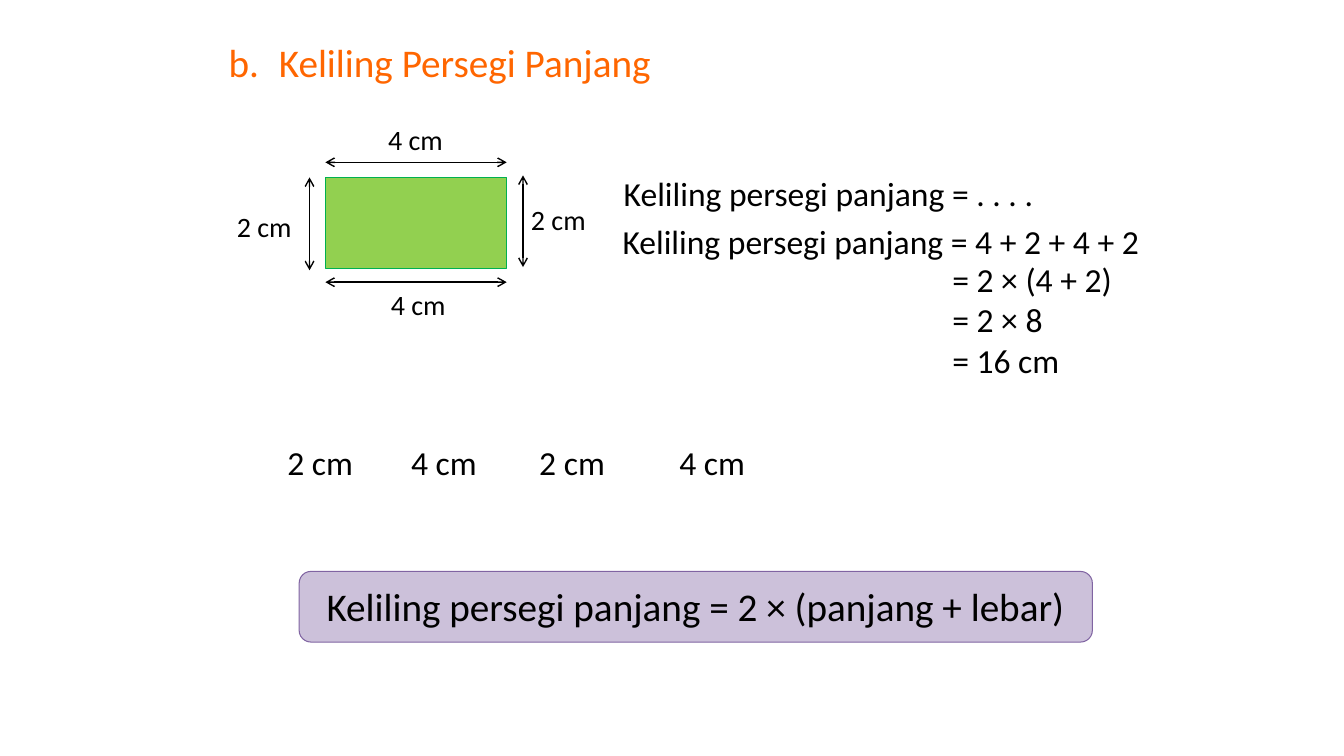
from dataclasses import dataclass

from lxml.etree import SubElement
from pptx import Presentation
from pptx.dml.color import RGBColor
from pptx.enum.shapes import MSO_CONNECTOR, MSO_SHAPE as SHAPE
from pptx.enum.text import MSO_AUTO_SIZE as AUTO_SIZE
from pptx.oxml.ns import qn
from pptx.util import Cm, Pt


@dataclass(frozen=True)
class Theme:
    font: str = "Calibri"
    text: RGBColor = RGBColor(0x00, 0x00, 0x00)
    heading: RGBColor = RGBColor(0xFF, 0x66, 0x00)
    green: RGBColor = RGBColor(0x92, 0xD0, 0x50)
    green_line: RGBColor = RGBColor(0x00, 0xB0, 0x50)
    purple: RGBColor = RGBColor(0xCC, 0xC1, 0xDA)
    purple_line: RGBColor = RGBColor(0x80, 0x64, 0xA2)
    large: Pt = Pt(28)
    body: Pt = Pt(24)
    small: Pt = Pt(20)
    outline: Pt = Pt(0.75)
    arrow: Pt = Pt(1)


theme = Theme()


def add_text(shapes, box, lines, size, color=theme.text, wrap=False, tab=None):
    frame = shapes.add_textbox(*map(Cm, box)).text_frame
    frame.word_wrap = wrap
    frame.auto_size = AUTO_SIZE.SHAPE_TO_FIT_TEXT
    frame.text = "\n".join(lines)
    for paragraph in frame.paragraphs:
        if tab:
            tabs = SubElement(paragraph._p.get_or_add_pPr(), qn("a:tabLst"))
            SubElement(tabs, qn("a:tab"), pos=str(Cm(tab)), algn="l")
        font = paragraph.font
        font.name, font.size, font.color.rgb = theme.font, size, color


def add_panel(shapes, kind, box, fill, line):
    shape = shapes.add_shape(kind, *map(Cm, box))
    shape.shadow.inherit = False
    shape.fill.solid()
    shape.fill.fore_color.rgb = fill
    shape.line.color.rgb = line
    shape.line.width = theme.outline


presentation = Presentation()
presentation.slide_width, presentation.slide_height = Cm(33.87), Cm(19.05)
slide = presentation.slides.add_slide(presentation.slide_layouts[6])
shapes = slide.shapes

# Heading
add_text(shapes, (5.51, 0.84, 11.25, 1.45), ["b.\tKeliling Persegi Panjang"],
         theme.large, theme.heading, tab=1.27)

# Rectangle with its side lengths
left, top, width, height = 8.2, 4.47, 4.57, 2.29
add_panel(shapes, SHAPE.RECTANGLE, (left, top, width, height),
          theme.green, theme.green_line)
for label, x, y in [("2 cm", 5.72, 5.16), ("4 cm", 9.53, 2.95),
                    ("2 cm", 13.13, 4.98), ("4 cm", 9.6, 7.11)]:
    add_text(shapes, (x, y, 1.91, 1.12), [label], theme.small)

# Dimension arrows
right = left + width
for ends in [(7.8, top, 7.8, 6.81), (13.18, 4.42, 13.18, 6.73),
             (left, 4.09, right, 4.09), (left, 7.11, right, 7.11)]:
    connector = shapes.add_connector(MSO_CONNECTOR.STRAIGHT, *map(Cm, ends))
    connector.line.color.rgb = theme.text
    connector.line.width = theme.arrow
    outline = connector.line._get_or_add_ln()
    for end in ("a:headEnd", "a:tailEnd"):
        SubElement(outline, qn(end), type="arrow")
    SubElement(connector._element.spPr, qn("a:effectLst"))

# Row of the four sides
for label, x in [("2 cm", 6.99), ("4 cm", 10.11), ("2 cm", 13.34), ("4 cm", 16.87)]:
    add_text(shapes, (x, 11, 2.18, 1.27), [label], theme.body, wrap=True)

# Calculation
add_text(shapes, (15.47, 4.24, 10.92, 1.27),
         ["Keliling persegi panjang = . . . ."], theme.body)
add_text(shapes, (15.44, 5.44, 13.89, 1.27),
         ["Keliling persegi panjang = 4 + 2 + 4 + 2"], theme.body, wrap=True)
add_text(shapes, (23.75, 6.4, 4.75, 3.33),
         ["= 2 × (4 + 2)", "= 2 × 8", "= 16 cm"], theme.body)

# Formula
formula = shapes.add_group_shape()
add_panel(formula.shapes, SHAPE.ROUNDED_RECTANGLE, (7.54, 14.4, 19.99, 1.78),
          theme.purple, theme.purple_line)
add_text(formula.shapes, (7.98, 14.55, 19.13, 1.45),
         ["Keliling persegi panjang = 2 × (panjang + lebar)"], theme.large, wrap=True)

presentation.save("out.pptx")
